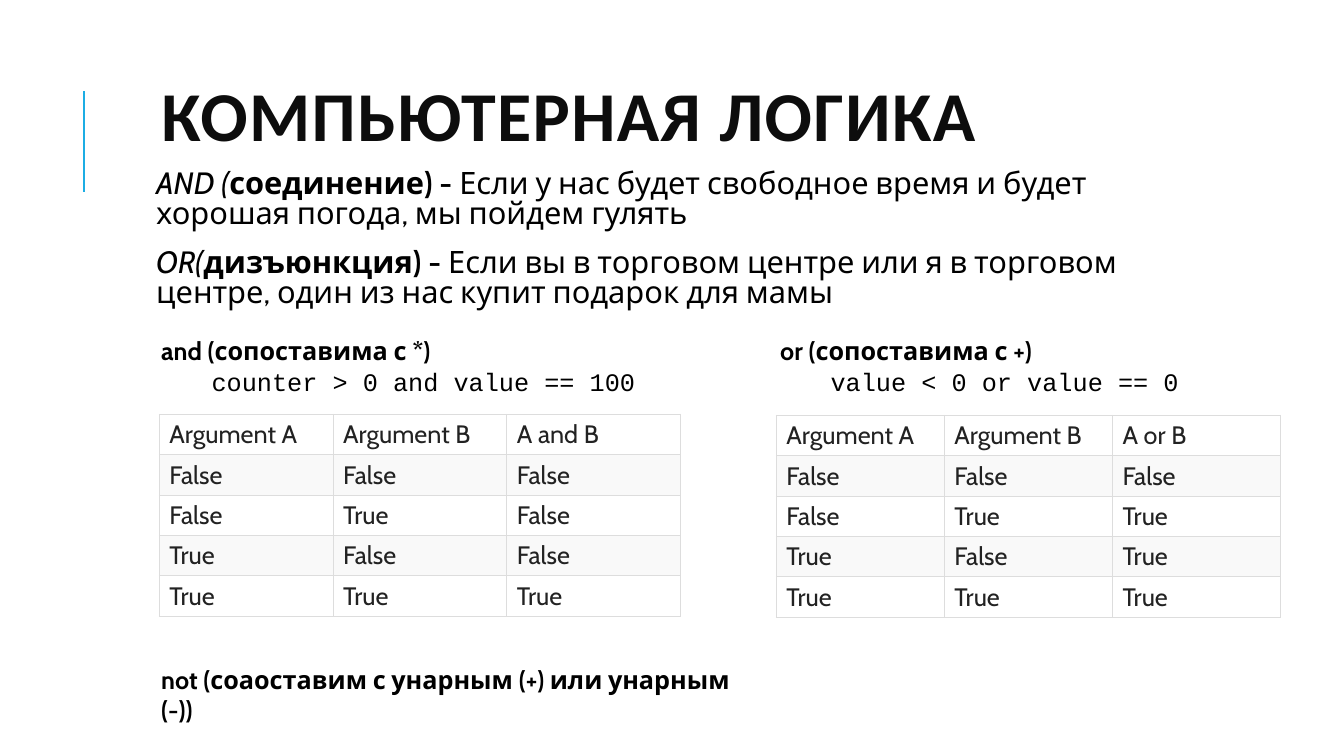
from dataclasses import dataclass

from lxml.etree import SubElement
from pptx import Presentation
from pptx.dml.color import RGBColor
from pptx.enum.shapes import MSO_CONNECTOR
from pptx.enum.text import MSO_ANCHOR, MSO_AUTO_SIZE, PP_ALIGN
from pptx.oxml.ns import qn
from pptx.util import Inches, Pt


@dataclass(frozen=True)
class Theme:
    title_color: str = "0D0D0D"
    text_color: str = "000000"
    cell_color: str = "222222"
    accent: str = "1CADE4"
    border: str = "DDDDDD"
    row_fills: tuple = ("FFFFFF", "F9F9F9")
    title_font: str = "Calibri"
    body_font: str = "Cabin"
    code_font: str = "Courier New"
    title_size: int = 50
    body_size: int = 22
    small_size: int = 18


THEME = Theme()

DEFINITIONS = [
    ("AND (", "соединение) - ",
     "Если у нас будет свободное время и будет хорошая погода, мы пойдем гулять"),
    ("OR(", "дизъюнкция) - ",
     "Если вы в торговом центре или я в торговом центре, один из нас купит подарок для мамы"),
]


def add_run(paragraph, text, size=THEME.small_size, font=THEME.body_font,
            color=THEME.text_color, bold=False, italic=False):
    run = paragraph.add_run()
    run.text = text
    run.font.size = Pt(size)
    run.font.name = font
    run.font.color.rgb = RGBColor.from_string(color)
    run.font.bold = bold
    run.font.italic = italic
    return run


def add_text_frame(slide, left, top, width, height):
    box = slide.shapes.add_textbox(Inches(left), Inches(top), Inches(width), Inches(height))
    box.text_frame.word_wrap = True
    return box.text_frame


def add_accent_line(slide):
    line = slide.shapes.add_connector(
        MSO_CONNECTOR.STRAIGHT, Inches(0.83), Inches(1.9), Inches(0.83), Inches(0.9))
    line.line.color.rgb = RGBColor.from_string(THEME.accent)
    line.line.width = Pt(1.5)
    SubElement(line._element.spPr, qn("a:effectLst"))


def set_title(slide, text):
    title = slide.shapes.title
    title.left, title.top = Inches(1.5), Inches(0.75)
    title.width, title.height = Inches(10.5), Inches(0.9)
    frame = title.text_frame
    frame.auto_size = MSO_AUTO_SIZE.NONE
    frame.vertical_anchor = MSO_ANCHOR.MIDDLE
    paragraph = frame.paragraphs[0]
    paragraph.alignment = PP_ALIGN.LEFT
    paragraph.line_spacing = 0.8
    run = add_run(paragraph, text, THEME.title_size, THEME.title_font,
                  THEME.title_color, bold=True)
    run.font._element.set("spc", "100")


def add_definitions(slide):
    frame = add_text_frame(slide, 1.5, 1.65, 10.5, 1.58)
    frame.margin_left = frame.margin_right = Inches(0.05)
    frame.margin_top = frame.margin_bottom = Inches(0.05)
    for index, (operator, term, example) in enumerate(DEFINITIONS):
        paragraph = frame.add_paragraph() if index else frame.paragraphs[0]
        paragraph.line_spacing = 0.8
        paragraph.space_before = Pt(12)
        paragraph.space_after = Pt(2)
        add_run(paragraph, operator, THEME.body_size, italic=True)
        add_run(paragraph, term, THEME.body_size, bold=True)
        add_run(paragraph, example, THEME.body_size)


def add_operator(slide, left, top, width, heading, code=None):
    frame = add_text_frame(slide, left, top, width, 0.71 if code else 0.4)
    add_run(frame.paragraphs[0], heading, bold=True)
    if code:
        paragraph = frame.add_paragraph()
        paragraph._p.get_or_add_pPr().set("marL", str(Inches(0.5)))
        add_run(paragraph, code, font=THEME.code_font)


def add_borders(cell):
    properties = cell._tc.get_or_add_tcPr()
    for side in ("lnL", "lnR", "lnT", "lnB"):
        line = SubElement(properties, qn(f"a:{side}"), w=str(Pt(0.75)))
        fill = SubElement(line, qn("a:solidFill"))
        SubElement(fill, qn("a:srgbClr"), val=THEME.border)


def add_truth_table(slide, left, top, width, heading, operation):
    inputs = [(a, b) for a in (False, True) for b in (False, True)]
    rows = [("Argument A", "Argument B", heading)]
    rows += [(a, b, operation(a, b)) for a, b in inputs]
    table = slide.shapes.add_table(
        len(rows), 3, Inches(left), Inches(top), Inches(width), Inches(2)).table
    table.first_row = table.horz_banding = False
    for row_index, row in enumerate(rows):
        for column_index, value in enumerate(row):
            cell = table.cell(row_index, column_index)
            cell.vertical_anchor = MSO_ANCHOR.MIDDLE
            add_borders(cell)
            cell.fill.solid()
            cell.fill.fore_color.rgb = RGBColor.from_string(THEME.row_fills[row_index % 2])
            add_run(cell.text_frame.paragraphs[0], str(value), color=THEME.cell_color)


def main():
    presentation = Presentation()
    presentation.slide_width, presentation.slide_height = Inches(13.33), Inches(7.5)
    slide = presentation.slides.add_slide(presentation.slide_layouts.get_by_name("Title Only"))
    add_accent_line(slide)
    set_title(slide, "КОМПЬЮТЕРНАЯ ЛОГИКА")
    add_definitions(slide)
    add_operator(slide, 1.5, 3.28, 5.7, "and (сопоставима с *)", "counter > 0 and value == 100")
    add_truth_table(slide, 1.58, 4.11, 5.17, "A and B", lambda a, b: a and b)
    add_operator(slide, 7.64, 3.28, 5.06, "or (сопоставима с +)", "value < 0 or value == 0")
    add_truth_table(slide, 7.7, 4.12, 5, "A or B", lambda a, b: a or b)
    add_operator(slide, 1.5, 6.54, 6.2, "not (соаоставим с унарным (+) или унарным (-))")
    presentation.save("out.pptx")


if __name__ == "__main__":
    main()
